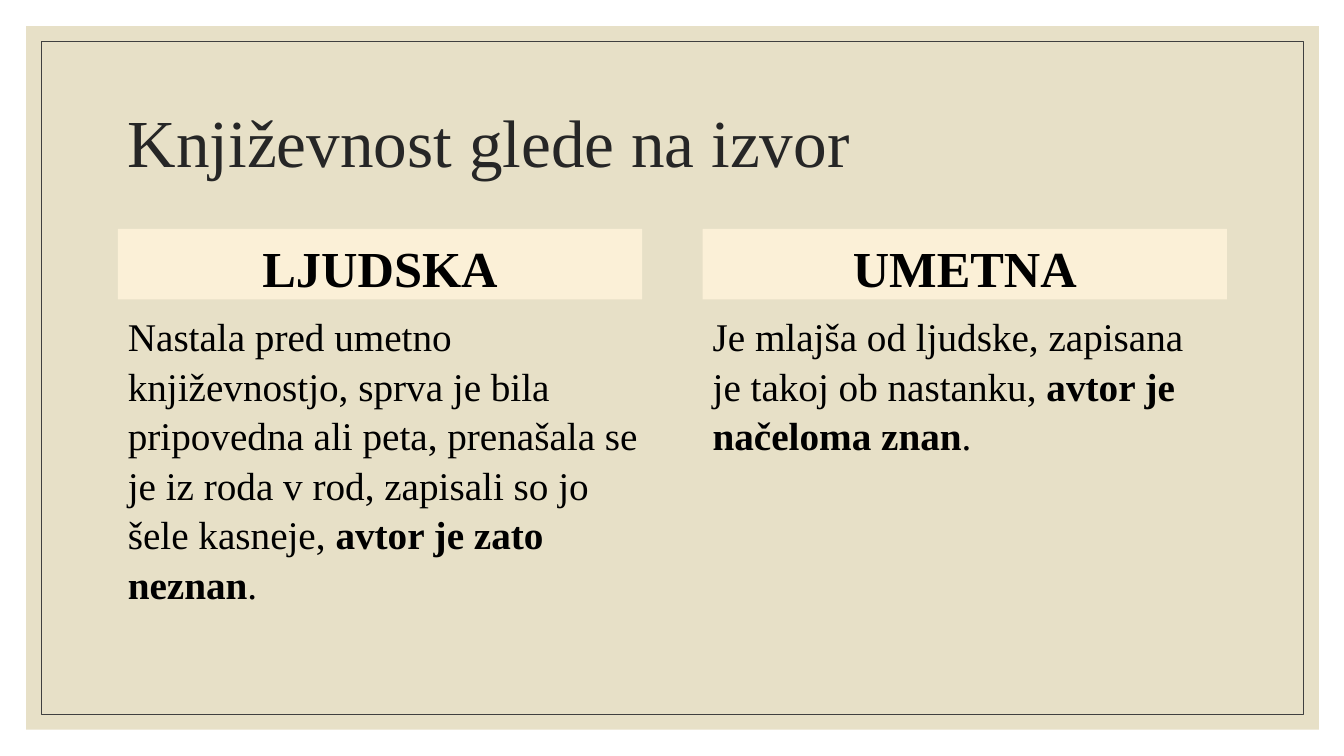
from dataclasses import dataclass

from pptx import Presentation
from pptx.dml.color import RGBColor as RGB
from pptx.enum.shapes import MSO_SHAPE as Kind
from pptx.enum.text import MSO_ANCHOR as Anchor, PP_ALIGN as Align
from pptx.util import Pt

PX = 9144
FONT = "Times New Roman"
SAND = RGB(0xE7, 0xE0, 0xC7)
CREAM = RGB(0xFB, 0xF0, 0xD7)
GREY = RGB(0x40, 0x40, 0x40)
DARK = RGB(0x26, 0x26, 0x26)
BLACK = RGB(0, 0, 0)

TITLE = {"size": Pt(48), "color": DARK}
HEAD = {"size": Pt(36), "color": BLACK}
BODY = {"size": Pt(28), "color": BLACK}


@dataclass
class Box:
    left: int
    top: int
    width: int
    height: int

    def emu(self) -> list[int]:
        """Return the box in EMU."""
        return [n * PX for n in (self.left, self.top, self.width, self.height)]


@dataclass
class Column:
    left: int
    width: int
    head: str
    lead: str
    key: str


COLUMNS = [
    Column(117, 536, "LJUDSKA",
           "Nastala pred umetno književnostjo, sprva je bila pripovedna ali peta, "
           "prenašala se je iz roda v rod, zapisali so jo šele kasneje, ",
           "avtor je zato neznan"),
    Column(697, 520, "UMETNA",
           "Je mlajša od ljudske, zapisana je takoj ob nastanku, ",
           "avtor je načeloma znan"),
]


def add_rect(slide, box: Box, fill: RGB | None = None, line: RGB | None = None):
    """Draw a rectangle with an optional fill and outline."""
    rect = slide.shapes.add_shape(Kind.RECTANGLE, *box.emu())
    rect.shadow.inherit = False
    if fill is None:
        rect.fill.background()
    else:
        rect.fill.solid()
        rect.fill.fore_color.rgb = fill
    if line is None:
        rect.line.fill.background()
    else:
        rect.line.color.rgb = line
        rect.line.width = Pt(0.5)
    return rect


def write(shape, runs: list[tuple[str, bool]], font: dict, para: dict, frame: dict) -> None:
    """Fill a shape with one paragraph of runs."""
    text = shape.text_frame
    for name, value in ({"word_wrap": True} | frame).items():
        setattr(text, name, value)
    first = text.paragraphs[0]
    for name, value in para.items():
        setattr(first, name, value)
    for words, bold in runs:
        run = first.add_run()
        run.text = words
        style = {"name": FONT, "size": font["size"], "bold": bold}
        for name, value in style.items():
            setattr(run.font, name, value)
        run.font.color.rgb = font["color"]


def add_column(slide, col: Column) -> None:
    """Draw a heading bar and the text under it."""
    bar = add_rect(slide, Box(col.left, 227, 520, 70), CREAM)
    write(bar, [(col.head, True)], HEAD,
          {"alignment": Align.CENTER, "line_spacing": 1.05},
          {"vertical_anchor": Anchor.MIDDLE, "margin_top": 9 * PX})
    body = slide.shapes.add_textbox(*Box(col.left, 301, col.width, 350).emu())
    write(body, [(col.lead, False), (col.key, True), (".", False)], BODY,
          {"alignment": Align.LEFT, "line_spacing": 1.05},
          {"vertical_anchor": Anchor.TOP, "margin_top": 7 * PX})


def main() -> None:
    """Build and save the slide."""
    deck = Presentation()
    deck.slide_width, deck.slide_height = 1333 * PX, 750 * PX
    slide = deck.slides.add_slide(deck.slide_layouts[6])
    add_rect(slide, Box(26, 26, 1282, 698), SAND)
    add_rect(slide, Box(41, 41, 1252, 668), line=GREY)
    title = slide.shapes.add_textbox(*Box(117, 70, 1100, 150).emu())
    write(title, [("Književnost glede na izvor", False)], TITLE,
          {"alignment": Align.LEFT, "line_spacing": 0.9},
          {"vertical_anchor": Anchor.MIDDLE})
    for col in COLUMNS:
        add_column(slide, col)
    deck.save("out.pptx")


if __name__ == "__main__":
    main()
